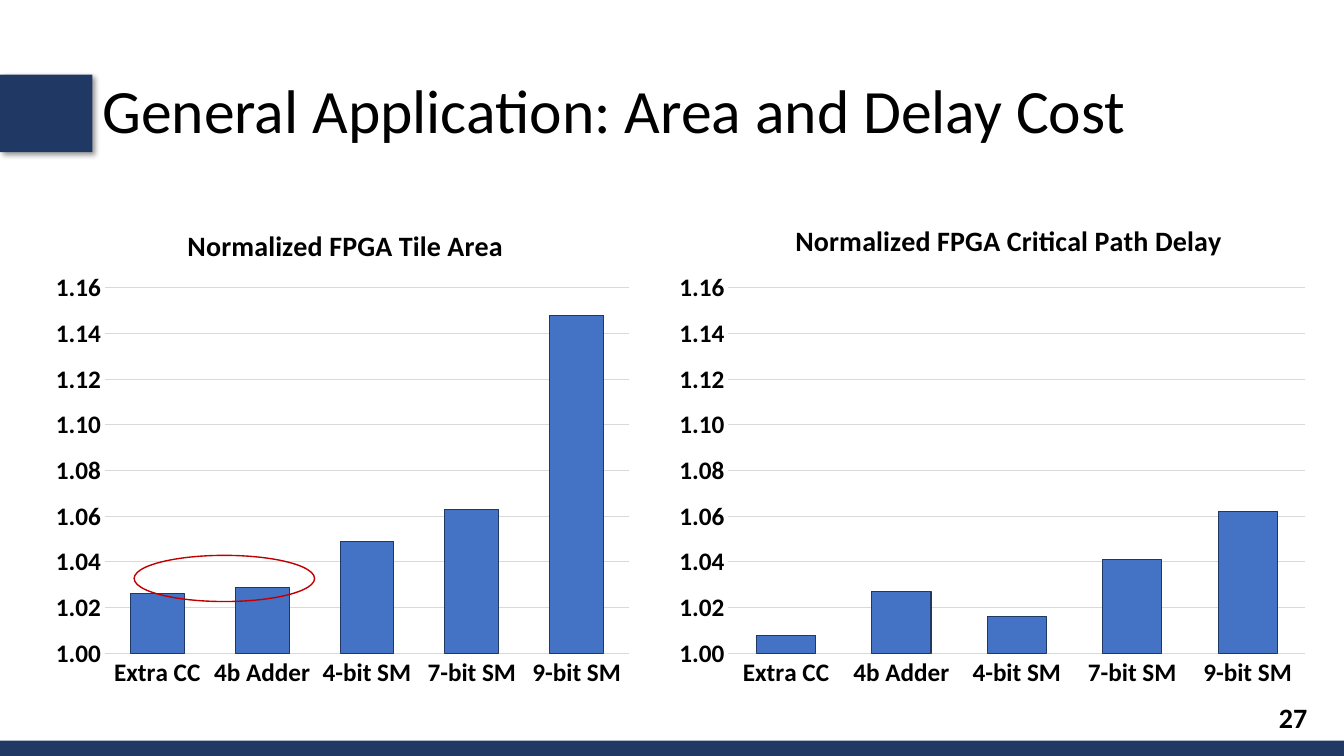
from lxml import etree
from pptx import Presentation
from pptx.chart.data import CategoryChartData
from pptx.dml.color import RGBColor
from pptx.enum.chart import XL_CHART_TYPE, XL_TICK_MARK
from pptx.enum.shapes import MSO_SHAPE
from pptx.enum.text import MSO_ANCHOR, PP_ALIGN
from pptx.oxml import parse_xml
from pptx.oxml.ns import qn
from pptx.util import Pt

COLUMN = XL_CHART_TYPE.COLUMN_CLUSTERED
NO_TICK = XL_TICK_MARK.NONE
RECT, OVAL = MSO_SHAPE.RECTANGLE, MSO_SHAPE.OVAL
TOP, MIDDLE = MSO_ANCHOR.TOP, MSO_ANCHOR.MIDDLE
LEFT, RIGHT = PP_ALIGN.LEFT, PP_ALIGN.RIGHT

FONT = "Calibri"
BLACK, NAVY, BLUE, RED, GREY = "000000", "203864", "4472C4", "C00000", "D9D9D9"
DESIGNS = ["Extra CC", "4b Adder", "4-bit SM", "7-bit SM", "9-bit SM"]
SHADOW = """<a:outerShdw xmlns:a="http://schemas.openxmlformats.org/drawingml/2006/main"
  blurRad="50800" dist="38100" dir="2700000" algn="tl" rotWithShape="0">
  <a:srgbClr val="000000"><a:alpha val="40000"/></a:srgbClr></a:outerShdw>"""


def color(value):
    """Turn a hex string into a colour."""
    return RGBColor.from_string(value)


def style(font, size, bold=False):
    """Set the face, size, weight and colour of a font."""
    font.name, font.size, font.bold = FONT, Pt(size), bold
    font.color.rgb = color(BLACK)


def outline(line, value, width):
    """Give a line its colour and width."""
    line.color.rgb = color(value)
    line.width = Pt(width)


def add_shape(slide, kind, box, fill=None, line=None):
    """Add a flat shape with an optional fill and outline."""
    shape = slide.shapes.add_shape(kind, *map(Pt, box))
    shape.shadow.inherit = False
    if fill:
        shape.fill.solid()
        shape.fill.fore_color.rgb = color(fill)
    else:
        shape.fill.background()
    if line:
        outline(shape.line, line, 1)
    else:
        shape.line.fill.background()
    return shape


def add_text(slide, box, text, size, bold=False, align=LEFT, anchor=TOP):
    """Add a text box with one paragraph."""
    frame = slide.shapes.add_textbox(*map(Pt, box)).text_frame
    frame.word_wrap = True
    frame.vertical_anchor = anchor
    frame.text = text
    para = frame.paragraphs[0]
    para.alignment = align
    para.line_spacing = 0.9 if anchor == MIDDLE else 1
    style(para.runs[0].font, size, bold)


def place(parent, index, **values):
    """Fix a chart part at fractions of the chart's size."""
    for old in parent.findall(qn("c:layout")):
        parent.remove(old)
    layout = etree.Element(qn("c:layout"))
    manual = etree.SubElement(layout, qn("c:manualLayout"))
    for name, value in values.items():
        etree.SubElement(manual, qn("c:" + name)).set("val", str(value))
    parent.insert(index, layout)


def add_chart(slide, box, title, values, head, plot):
    """Add a column chart with its title and plot area in place."""
    data = CategoryChartData()
    data.categories = DESIGNS
    data.add_series("Series 1", values)
    chart = slide.shapes.add_chart(COLUMN, *map(Pt, box), data).chart
    style(chart.font, 10)
    chart.has_legend = False
    frame = chart.chart_title.text_frame
    frame.text = title
    style(frame.paragraphs[0].runs[0].font, 20, True)

    for axis in (chart.category_axis, chart.value_axis):
        axis.major_tick_mark = axis.minor_tick_mark = NO_TICK
        style(axis.tick_labels.font, 18, True)
    outline(chart.category_axis.format.line, GREY, 0.75)
    scale = chart.value_axis
    scale.minimum_scale, scale.maximum_scale, scale.major_unit = 1, 1.16, 0.02
    scale.tick_labels.number_format = "0.00"
    scale.tick_labels.number_format_is_linked = False
    scale.format.line.fill.background()
    outline(scale.major_gridlines.format.line, GREY, 0.75)

    bars = chart.plots[0]
    bars.vary_by_categories = False
    bars.gap_width, bars.overlap = 95, 12
    look = bars.series[0].format
    look.fill.solid()
    look.fill.fore_color.rgb = color(BLUE)
    outline(look.line, NAVY, 0.75)

    root = chart.element.find(qn("c:chart"))
    x, y = head
    place(root.find(qn("c:title")), 1, xMode="edge", yMode="edge", x=x, y=y)
    x, w = plot
    place(root.find(qn("c:plotArea")), 0, layoutTarget="inner",
          xMode="edge", yMode="edge", x=x, y=0.184, w=w, h=0.728)


def main():
    """Build the slide and save it."""
    deck = Presentation()
    deck.slide_width, deck.slide_height = Pt(960), Pt(540)
    slide = deck.slides.add_slide(deck.slide_layouts[6])
    block = add_shape(slide, RECT, (0, 53.3, 66, 55.4), NAVY)
    effects = block.element.spPr.find(qn("a:effectLst"))
    effects.append(parse_xml(SHADOW))
    add_shape(slide, RECT, (0, 529, 960, 11), NAVY)
    add_text(slide, (66, 29, 828, 104.4),
             "General Application: Area and Delay Cost", 44, anchor=MIDDLE)
    add_chart(slide, (32.4, 139.7, 425.5, 358.6), "Normalized FPGA Tile Area",
              (1.026, 1.029, 1.049, 1.063, 1.148), (0.23, 0.05), (0.1, 0.88))
    add_chart(slide, (476, 139.7, 465.8, 358.6),
              "Normalized FPGA Critical Path Delay",
              (1.008, 1.027, 1.016, 1.041, 1.062), (0.19, 0.04), (0.095, 0.885))
    add_text(slide, (725, 496.8, 216, 28.8), "27", 20, True, RIGHT)
    add_shape(slide, OVAL, (95.8, 396.7, 128.9, 33), line=RED)
    deck.save("out.pptx")


if __name__ == "__main__":
    main()
